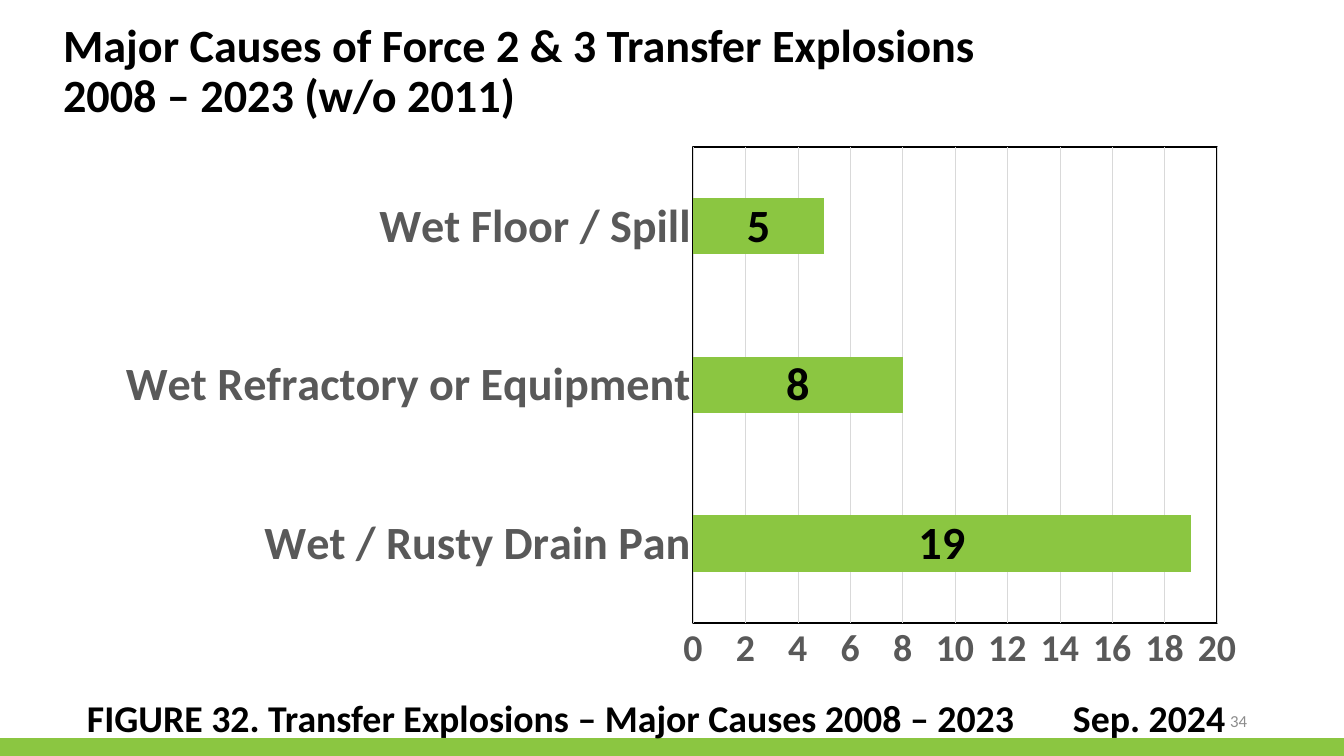
from dataclasses import dataclass

from lxml import etree
from pptx import Presentation
from pptx import util as u
from pptx.chart.data import CategoryChartData
from pptx.dml.color import RGBColor
from pptx.enum import chart as ch, shapes, text
from pptx.oxml import parse_xml
from pptx.oxml.ns import nsdecls, qn

# Content
TITLE = ["Major Causes of Force 2 & 3 Transfer Explosions", "2008 – 2023 (w/o 2011)"]
CAPTION = ["FIGURE 32. Transfer Explosions – Major Causes 2008 – 2023\tSep. 2024"]
PAGE_NUMBER = ["34"]
CAUSES = [("Wet / Rusty Drain Pan", 19), ("Wet Refractory or Equipment", 8), ("Wet Floor / Spill", 5)]

# Places in px: left, top, width, height
PX = 914400 / 50.4
PAGE = (1344, 756)
FOOTER_BAR = (0, 738, 1344, 18)
TITLE_BOX = (58, 20, 948, 70)
CAPTION_BOX = (82, 697, 1221, 106)
CAPTION_TAB = 986
NUMBER_BOX = (950, 701, 302, 40)
CHART_BOX = (103, 136, 1156, 546)
PLOT_BOX = (693, 147, 524, 476)


@dataclass(frozen=True)
class Theme:
    font: str = "Calibri"
    green: str = "8BC641"
    black: str = "000000"
    white: str = "FFFFFF"
    label: str = "595959"
    grid: str = "D9D9D9"
    muted: str = "8C8C8C"
    large: int = 66
    medium: int = 54
    small: int = 24


THEME = Theme()


def emu(*lengths):
    return [round(length * PX) for length in lengths]


def style(font, size, color, bold=True):
    font.name, font.size, font.bold = THEME.font, u.Pt(size), bold
    font.color.rgb = RGBColor.from_string(color)


def write(box, place, lines, size, color, bold=True, spacing=None,
          align=text.PP_ALIGN.LEFT, anchor=text.MSO_ANCHOR.TOP):
    box.left, box.top, box.width, box.height = emu(*place)
    frame = box.text_frame
    frame.word_wrap, frame.auto_size = True, text.MSO_AUTO_SIZE.NONE
    frame.vertical_anchor = anchor
    for index, line in enumerate(lines):
        para = frame.add_paragraph() if index else frame.paragraphs[0]
        para.alignment, para.line_spacing = align, spacing
        para.space_before = u.Pt(0)
        span = para.add_run()
        span.text = line
        style(span.font, size, color, bold)


def shape_format(fill, line):
    return parse_xml(
        f'<c:spPr {nsdecls("c", "a")}><a:solidFill><a:srgbClr val="{fill}"/></a:solidFill>{line}</c:spPr>')


def add_causes_chart(page):
    data = CategoryChartData()
    data.categories = [cause for cause, _ in CAUSES]
    data.add_series("Series 1", [count for _, count in CAUSES])
    chart = page.shapes.add_chart(ch.XL_CHART_TYPE.BAR_CLUSTERED, *emu(*CHART_BOX), data).chart
    chart.has_legend = chart.has_title = False
    style(chart.font, 10, THEME.black, False)

    # Bars and their labels
    plot = chart.plots[0]
    plot.gap_width, plot.vary_by_categories = 182, False
    bars = plot.series[0].format.fill
    bars.solid()
    bars.fore_color.rgb = RGBColor.from_string(THEME.green)
    plot.has_data_labels = True
    labels = plot.data_labels
    labels.show_value, labels.position = True, ch.XL_LABEL_POSITION.CENTER
    style(labels.font, THEME.large, THEME.black)

    # Axes
    causes, counts = chart.category_axis, chart.value_axis
    for axis, size in ((causes, THEME.large), (counts, THEME.medium)):
        axis.major_tick_mark = axis.minor_tick_mark = ch.XL_TICK_MARK.NONE
        style(axis.tick_labels.font, size, THEME.label)
    counts.minimum_scale, counts.maximum_scale, counts.major_unit = 0, 20, 2
    counts.format.line.fill.background()
    counts.has_major_gridlines = True
    for line in (causes.format.line, counts.major_gridlines.format.line):
        line.color.rgb = RGBColor.from_string(THEME.grid)
        line.width = u.Pt(0.75)

    # Plot position as fractions of the chart, then backgrounds
    left, top, width, height = CHART_BOX
    x, y, w, h = PLOT_BOX
    parts = {"x": (x - left) / width, "y": (y - top) / height, "w": w / width, "h": h / height}
    area = chart._chartSpace.chart.plotArea
    for old in area.findall(qn("c:layout")):
        area.remove(old)
    layout = etree.Element(qn("c:layout"))
    manual = etree.SubElement(layout, qn("c:manualLayout"))
    settings = [("layoutTarget", "inner"), ("xMode", "edge"), ("yMode", "edge")]
    settings += [(name, f"{value:.4f}") for name, value in parts.items()]
    for name, value in settings:
        etree.SubElement(manual, qn(f"c:{name}")).set("val", value)
    area.insert(0, layout)
    area.append(shape_format(
        THEME.white,
        f'<a:ln w="25400"><a:solidFill><a:srgbClr val="{THEME.black}"/></a:solidFill></a:ln>'))
    chart._chartSpace.chart.addnext(shape_format(THEME.white, "<a:ln><a:noFill/></a:ln>"))


def main():
    deck = Presentation()
    deck.slide_width, deck.slide_height = emu(*PAGE)
    page = deck.slides.add_slide(deck.slide_layouts[5])

    # Footer bar and page number
    bar = page.shapes.add_shape(shapes.MSO_SHAPE.RECTANGLE, *emu(*FOOTER_BAR))
    bar.shadow.inherit = False
    bar.fill.solid()
    bar.fill.fore_color.rgb = RGBColor.from_string(THEME.green)
    bar.line.fill.background()
    write(page.shapes.add_textbox(*emu(*NUMBER_BOX)), NUMBER_BOX, PAGE_NUMBER, THEME.small,
          THEME.muted, False, align=text.PP_ALIGN.RIGHT, anchor=text.MSO_ANCHOR.MIDDLE)

    # Title
    write(page.shapes.title, TITLE_BOX, TITLE, THEME.large, THEME.black, spacing=0.9)

    # Caption, with the date at a tab stop
    caption = page.shapes.add_textbox(*emu(*CAPTION_BOX))
    write(caption, CAPTION_BOX, CAPTION, THEME.medium, THEME.black, spacing=0.9)
    tabs = etree.SubElement(caption.text_frame.paragraphs[0]._p.get_or_add_pPr(), qn("a:tabLst"))
    tab = etree.SubElement(tabs, qn("a:tab"))
    tab.set("pos", str(emu(CAPTION_TAB)[0]))
    tab.set("algn", "l")

    add_causes_chart(page)
    deck.save("out.pptx")


if __name__ == "__main__":
    main()
